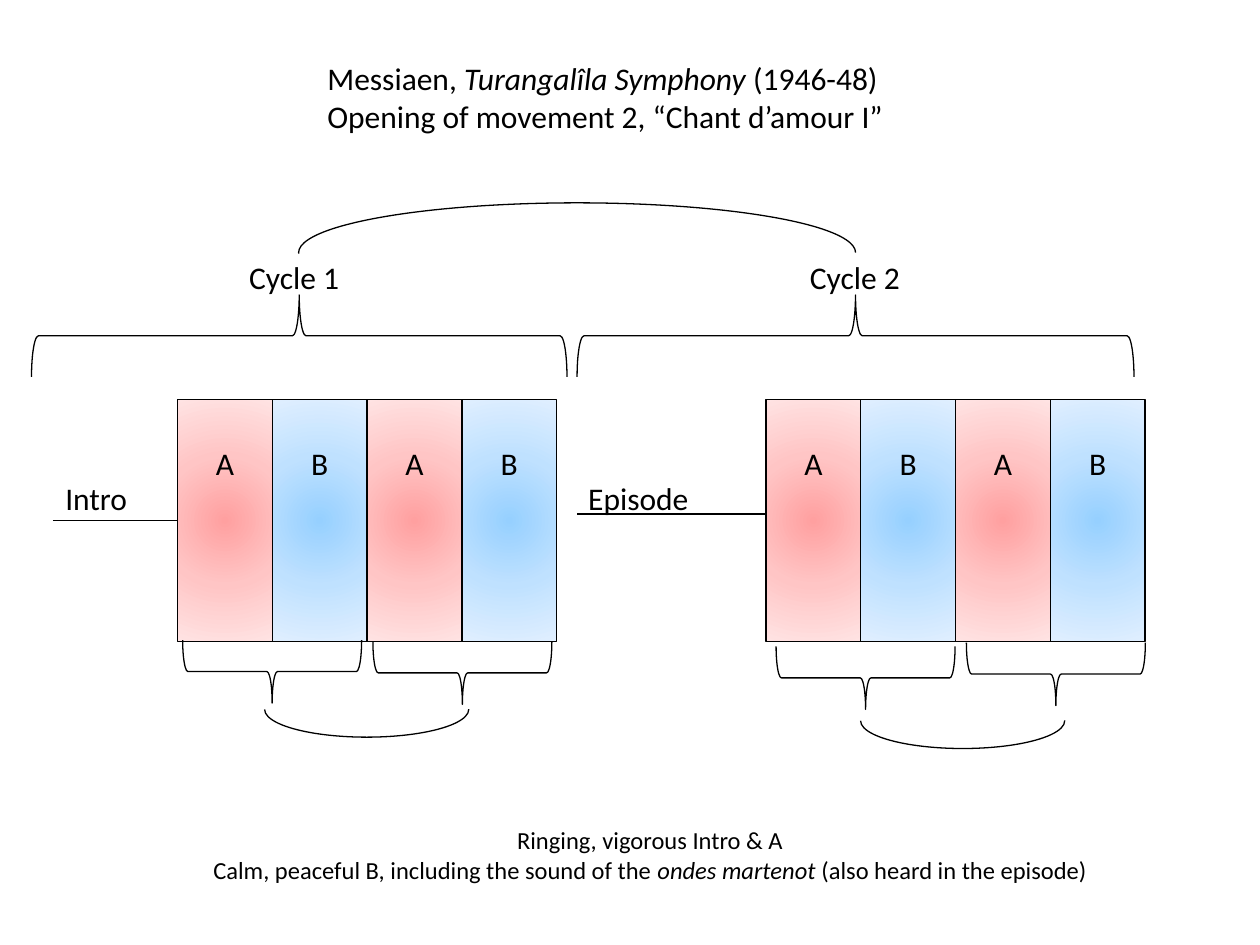
"""Build a slide charting the opening form of a symphony movement."""
import pptx
import pptx.dml.color
import pptx.enum.shapes
import pptx.enum.text
import pptx.oxml
import pptx.oxml.ns
import pptx.util
from lxml import etree

Inches = pptx.util.Inches
Pt = pptx.util.Pt
RGBColor = pptx.dml.color.RGBColor
SHAPE = pptx.enum.shapes.MSO_SHAPE
ALIGN = pptx.enum.text.PP_ALIGN

BLACK = RGBColor(0x00, 0x00, 0x00)
SECTION_COLORS = {
    "A": (RGBColor(0xFF, 0xA0, 0xA0), RGBColor(0xFF, 0xC5, 0xC5), RGBColor(0xFF, 0xE3, 0xE3)),
    "B": (RGBColor(0x96, 0xD0, 0xFF), RGBColor(0xBF, 0xE1, 0xFF), RGBColor(0xE0, 0xEF, 0xFF)),
}
FONT = "Calibri"

TITLE = [
    [("Messiaen, ", False), ("Turangalîla Symphony ", True), ("(1946-48)", False)],
    [("Opening of movement 2, “Chant d’amour I”", False)],
]
CAPTION = [
    [("Ringing, vigorous Intro & A", False)],
    [("Calm, peaceful B, including the sound of the ", False), ("ondes martenot", True),
     (" (also heard in the episode)", False)],
]
SECTIONS = "ABAB"
SECTION_TOP, SECTION_WIDTH, SECTION_HEIGHT = 3.17, 0.752, 1.92
SECTION_MIDDLE = SECTION_TOP + SECTION_HEIGHT / 2
CYCLES = [
    {"name": "Cycle 1", "name_left": 1.88, "lead": "Intro", "lead_left": 0.42,
     "line_left": 0.42, "line_y": SECTION_MIDDLE, "left": 1.41,
     "brace": (0.25, 2.34, 4.25, 0.65),
     "pair_braces": [(1.45, 5.08), (2.96, 5.09)], "arc": (2.1, 5.41)},
    {"name": "Cycle 2", "name_left": 6.33, "lead": "Episode", "lead_left": 4.57,
     "line_left": 4.58, "line_y": 4.08, "left": 6.08,
     "brace": (4.58, 2.34, 4.42, 0.65),
     "pair_braces": [(6.16, 5.13), (7.67, 5.1)], "arc": (6.83, 5.5)},
]
PAIR_BRACE_SIZE = (1.42, 0.5)
PAIR_ARC_SIZE = (1.62, 0.44)
CYCLE_ARC = (2.37, 1.61, 4.42, 0.79)


def write(frame, paragraphs, size=18, align=ALIGN.LEFT, wrap=True):
    frame.word_wrap = wrap
    frame.vertical_anchor = pptx.enum.text.MSO_ANCHOR.TOP
    for index, runs in enumerate(paragraphs):
        paragraph = frame.add_paragraph() if index else frame.paragraphs[0]
        paragraph.alignment = align
        for text, italic in runs:
            run = paragraph.add_run()
            run.text = text
            run.font.name = FONT
            run.font.size = Pt(size)
            run.font.italic = italic
            run.font.color.rgb = BLACK


def add_text(slide, box, paragraphs, **text_format):
    frame = slide.shapes.add_textbox(*map(Inches, box)).text_frame
    write(frame, paragraphs, **text_format)
    frame.auto_size = pptx.enum.text.MSO_AUTO_SIZE.SHAPE_TO_FIT_TEXT


def outline(line):
    line.color.rgb = BLACK
    line.width = Pt(0.75)


def add_outlined(slide, preset, box, rotation=0):
    shape = slide.shapes.add_shape(preset, *map(Inches, box))
    shape.shadow.inherit = False
    shape.rotation = rotation
    shape.fill.background()
    outline(shape.line)
    return shape


def add_brace(slide, preset, left, top, width, height):
    unturned = (left + (width - height) / 2, top + (height - width) / 2, height, width)
    add_outlined(slide, preset, unturned, rotation=270)


def add_arc(slide, box, rotation=0):
    arc = add_outlined(slide, SHAPE.ARC, box, rotation)
    arc.adjustments[0] = 107.872
    arc.adjustments[1] = 0


def fill_radial(shape, colors):
    stops = "".join(
        f'<a:gs pos="{index * 50000}"><a:srgbClr val="{color}"/></a:gs>'
        for index, color in enumerate(colors))
    gradient = pptx.oxml.parse_xml(
        f'<a:gradFill {pptx.oxml.ns.nsdecls("a")} rotWithShape="1"><a:gsLst>{stops}</a:gsLst>'
        '<a:path path="circle"><a:fillToRect l="50000" t="50000" r="50000" b="50000"/></a:path>'
        '</a:gradFill>')
    properties = shape.element.spPr
    properties.replace(properties.find(pptx.oxml.ns.qn("a:noFill")), gradient)


def add_section(slide, letter, left):
    section = add_outlined(
        slide, SHAPE.RECTANGLE, (left, SECTION_TOP, SECTION_WIDTH, SECTION_HEIGHT))
    fill_radial(section, SECTION_COLORS[letter])
    section.text_frame.margin_top = Inches(0.35)
    write(section.text_frame, [[(letter, False)]], align=ALIGN.CENTER)
    return section


def add_cycle(slide, cycle):
    sections = [add_section(slide, letter, cycle["left"] + index * SECTION_WIDTH)
                for index, letter in enumerate(SECTIONS)]
    y = Inches(cycle["line_y"])
    lead_line = slide.shapes.add_connector(
        pptx.enum.shapes.MSO_CONNECTOR.STRAIGHT,
        Inches(cycle["line_left"]), y, Inches(cycle["left"]), y)
    outline(lead_line.line)
    etree.SubElement(lead_line.element.spPr, pptx.oxml.ns.qn("a:effectLst"))
    if cycle["line_y"] == SECTION_MIDDLE:
        lead_line.end_connect(sections[0], 1)
    for corner in cycle["pair_braces"]:
        add_brace(slide, SHAPE.LEFT_BRACE, *corner, *PAIR_BRACE_SIZE)
    add_arc(slide, cycle["arc"] + PAIR_ARC_SIZE, rotation=180)
    add_brace(slide, SHAPE.RIGHT_BRACE, *cycle["brace"])
    add_text(slide, (cycle["name_left"], 2, 1.2, 0.4), [[(cycle["name"], False)]])
    add_text(slide, (cycle["lead_left"], 3.75, 1.2, 0.4), [[(cycle["lead"], False)]])


def main():
    deck = pptx.Presentation()
    deck.slide_width, deck.slide_height = Inches(10), Inches(7.5)
    slide = deck.slides.add_slide(deck.slide_layouts[6])
    add_text(slide, (2.5, 0.42, 4.67, 0.71), TITLE, wrap=False)
    add_arc(slide, CYCLE_ARC)
    for cycle in CYCLES:
        add_cycle(slide, cycle)
    add_text(slide, (0.91, 6.5, 8.5, 0.57), CAPTION, size=14, align=ALIGN.CENTER)
    deck.save("out.pptx")


if __name__ == "__main__":
    main()
